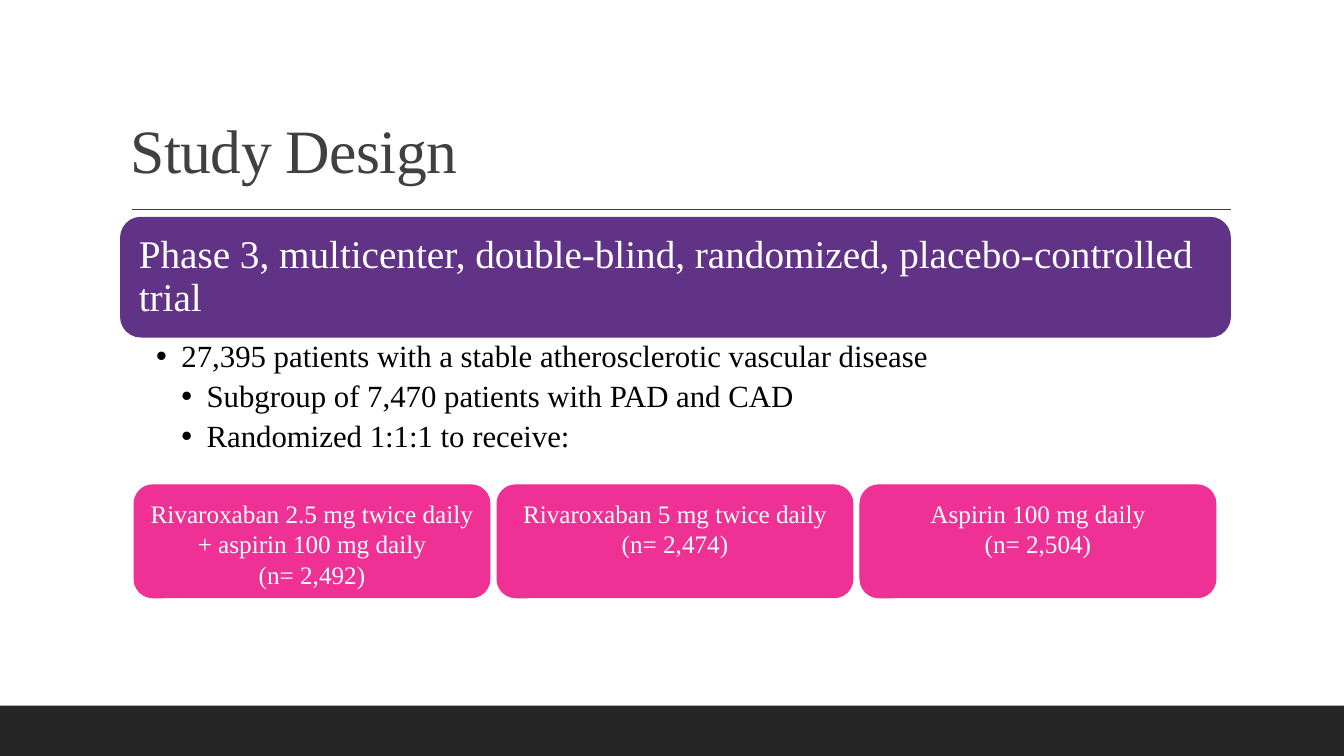
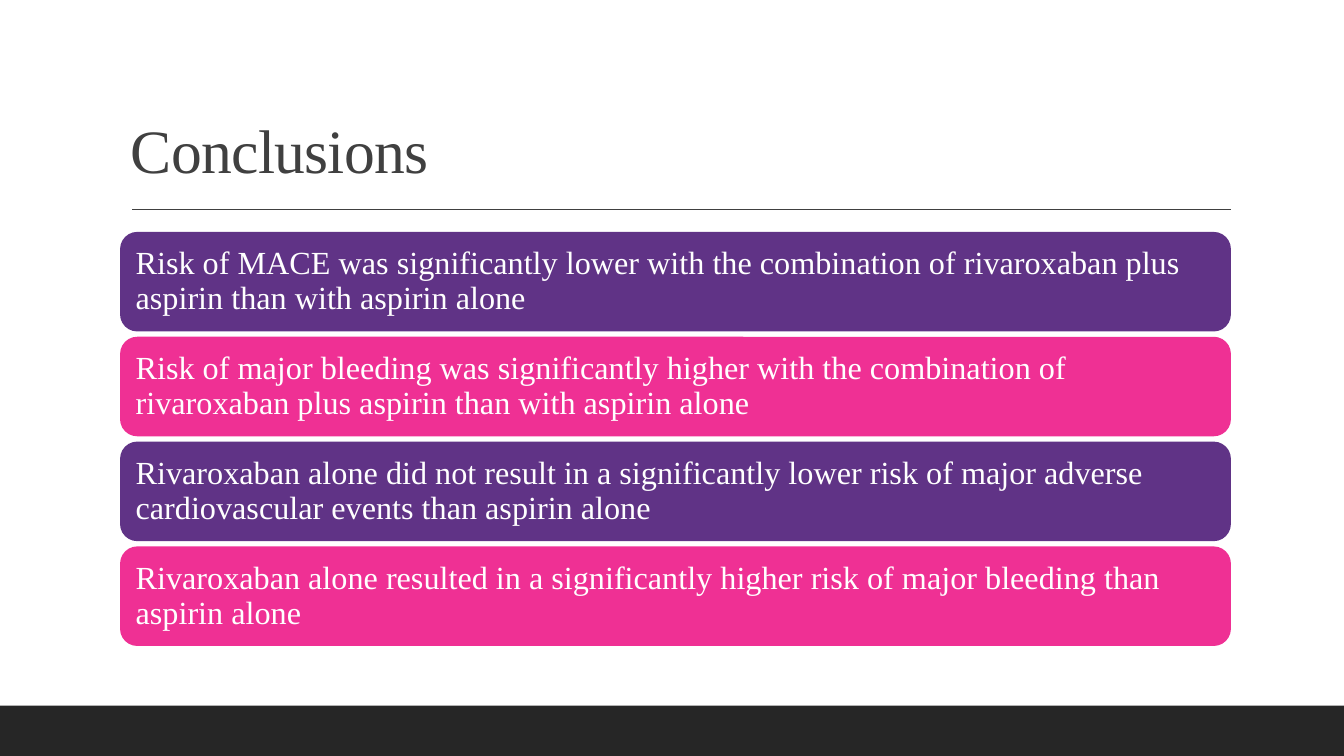
from dataclasses import dataclass

from lxml import etree
from pptx import Presentation
from pptx import util as u
from pptx.dml import color as c
from pptx.enum import shapes, text
from pptx.oxml import ns


@dataclass(frozen=True)
class Theme:
    font: str = "Times New Roman"
    white: str = "FFFFFF"
    black: str = "000000"
    gray: str = "404040"
    footer: str = "262626"
    purple: str = "603386"
    pink: str = "EF3094"
    title_size: int = 44
    banner_size: int = 28
    conclusion_size: int = 23
    bullet_size: int = 22
    arm_size: int = 18


class Deck:
    left, width = 1.2, 11

    def __init__(self, theme):
        self.theme = theme
        self.presentation = Presentation()
        self.presentation.slide_width = u.Inches(13.33)
        self.presentation.slide_height = u.Inches(7.5)
        self.slide = None

    def new_slide(self, title):
        """Start a slide with the shared footer band, rule and title."""
        theme = self.theme
        self.slide = self.presentation.slides.add_slide(self.presentation.slide_layouts[6])
        self.shape(shapes.MSO_SHAPE.RECTANGLE, 0, 7, 13.33, 0.5, theme.footer)
        self.rule(1.31, 12.21, 2.08)
        frame = self.text_box(self.left, 0.31, self.width, 1.59, (0.1, 0.05, 0.1, 0.05))
        frame.vertical_anchor = text.MSO_ANCHOR.BOTTOM
        self.set_text(frame, [title], theme.title_size, theme.gray, spacing=0.9)
        for run in frame.paragraphs[0].runs:
            run._r.get_or_add_rPr().set("spc", "-50")

    def shape(self, kind, left, top, width, height, color, line_width=0):
        shape = self.slide.shapes.add_shape(
            kind, u.Inches(left), u.Inches(top), u.Inches(width), u.Inches(height))
        shape.shadow.inherit = False
        shape.fill.solid()
        shape.fill.fore_color.rgb = c.RGBColor.from_string(color)
        if line_width:
            shape.line.color.rgb = c.RGBColor.from_string(color)
            shape.line.width = u.Pt(line_width)
        else:
            shape.line.fill.background()
        return shape

    def rule(self, start, end, top):
        line = self.slide.shapes.add_connector(
            shapes.MSO_CONNECTOR.STRAIGHT,
            u.Inches(start), u.Inches(top), u.Inches(end), u.Inches(top))
        line.line.color.rgb = c.RGBColor.from_string(self.theme.gray)
        line.line.width = u.Pt(1)
        etree.SubElement(line._element.spPr, ns.qn("a:effectLst"))

    def text_box(self, left, top, width, height, margins):
        box = self.slide.shapes.add_textbox(
            u.Inches(left), u.Inches(top), u.Inches(width), u.Inches(height))
        self.set_margins(box.text_frame, margins)
        return box.text_frame

    def set_margins(self, frame, margins):
        frame.word_wrap = True
        (frame.margin_left, frame.margin_top,
         frame.margin_right, frame.margin_bottom) = map(u.Inches, margins)

    def set_text(self, frame, lines, size, color, align=text.PP_ALIGN.LEFT, spacing=1.0):
        frame.text = "\n".join(lines)
        for paragraph in frame.paragraphs:
            paragraph.alignment = align
            paragraph.line_spacing = spacing
            for run in paragraph.runs:
                run.font.name = self.theme.font
                run.font.size = u.Pt(size)
                run.font.color.rgb = c.RGBColor.from_string(color)

    def card(self, left, top, width, height, color, lines, size, margin, line_width=1.25,
             anchor=text.MSO_ANCHOR.MIDDLE, align=text.PP_ALIGN.LEFT, spacing=0.9):
        """Rounded box with white text."""
        card = self.shape(shapes.MSO_SHAPE.ROUNDED_RECTANGLE,
                          left, top, width, height, color, line_width)
        self.set_margins(card.text_frame, (margin,) * 4)
        card.text_frame.vertical_anchor = anchor
        self.set_text(card.text_frame, lines, size, self.theme.white, align, spacing)

    def bullets(self, top, height, items):
        """Bulleted list of (level, wording) pairs."""
        frame = self.text_box(self.left, top, self.width, height, (0.35, 0.04, 0.22, 0.04))
        self.set_text(frame, [wording for _, wording in items],
                      self.theme.bullet_size, self.theme.black, spacing=0.9)
        for paragraph, (level, _) in zip(frame.paragraphs, items):
            paragraph.level = level
            paragraph.space_after = u.Pt(5)
            properties = paragraph._p.get_or_add_pPr()
            properties.set("marL", str(u.Inches(0.25 * level)))
            properties.set("indent", str(u.Inches(-0.25)))
            etree.SubElement(properties, ns.qn("a:buFont"), typeface="Arial")
            etree.SubElement(properties, ns.qn("a:buChar"), char="•")


def study_design(deck):
    theme = deck.theme
    deck.new_slide("Study Design")
    deck.card(deck.left, 2.16, deck.width, 1.18, theme.purple,
              ["Phase 3, multicenter, double-blind, randomized, placebo-controlled trial"],
              theme.banner_size, 0.12)
    deck.bullets(3.34, 1.4, [
        (1, "27,395 patients with a stable atherosclerotic vascular disease"),
        (2, "Subgroup of 7,470 patients with PAD and CAD"),
        (2, "Randomized 1:1:1 to receive:"),
    ])

    # Treatment arms
    arms = [
        ["Rivaroxaban 2.5 mg twice daily", "+ aspirin 100 mg daily", "(n= 2,492)"],
        ["Rivaroxaban 5 mg twice daily", "(n= 2,474)"],
        ["Aspirin 100 mg daily", "(n= 2,504)"],
    ]
    arm_width, gap = 3.53, 0.07
    for column, lines in enumerate(arms):
        deck.card(1.33 + column * (arm_width + gap), 4.81, arm_width, 1.12, theme.pink,
                  lines, theme.arm_size, 0.08, line_width=0.75,
                  anchor=text.MSO_ANCHOR.TOP, align=text.PP_ALIGN.CENTER, spacing=1.0)


def conclusions(deck):
    theme = deck.theme
    deck.new_slide("Conclusions")
    findings = [
        "Risk of MACE was significantly lower with the combination of rivaroxaban plus "
        "aspirin than with aspirin alone",
        "Risk of major bleeding was significantly higher with the combination of "
        "rivaroxaban plus aspirin than with aspirin alone",
        "Rivaroxaban alone did not result in a significantly lower risk of major adverse "
        "cardiovascular events than aspirin alone",
        "Rivaroxaban alone resulted in a significantly higher risk of major bleeding than "
        "aspirin alone",
    ]
    card_height, pitch = 0.97, 1.04
    for row, finding in enumerate(findings):
        color = (theme.purple, theme.pink)[row % 2]
        deck.card(deck.left, 2.31 + row * pitch, deck.width, card_height, color,
                  [finding], theme.conclusion_size, 0.1)


def main():
    deck = Deck(Theme())
    study_design(deck)
    conclusions(deck)
    deck.presentation.save("out.pptx")


if __name__ == "__main__":
    main()
